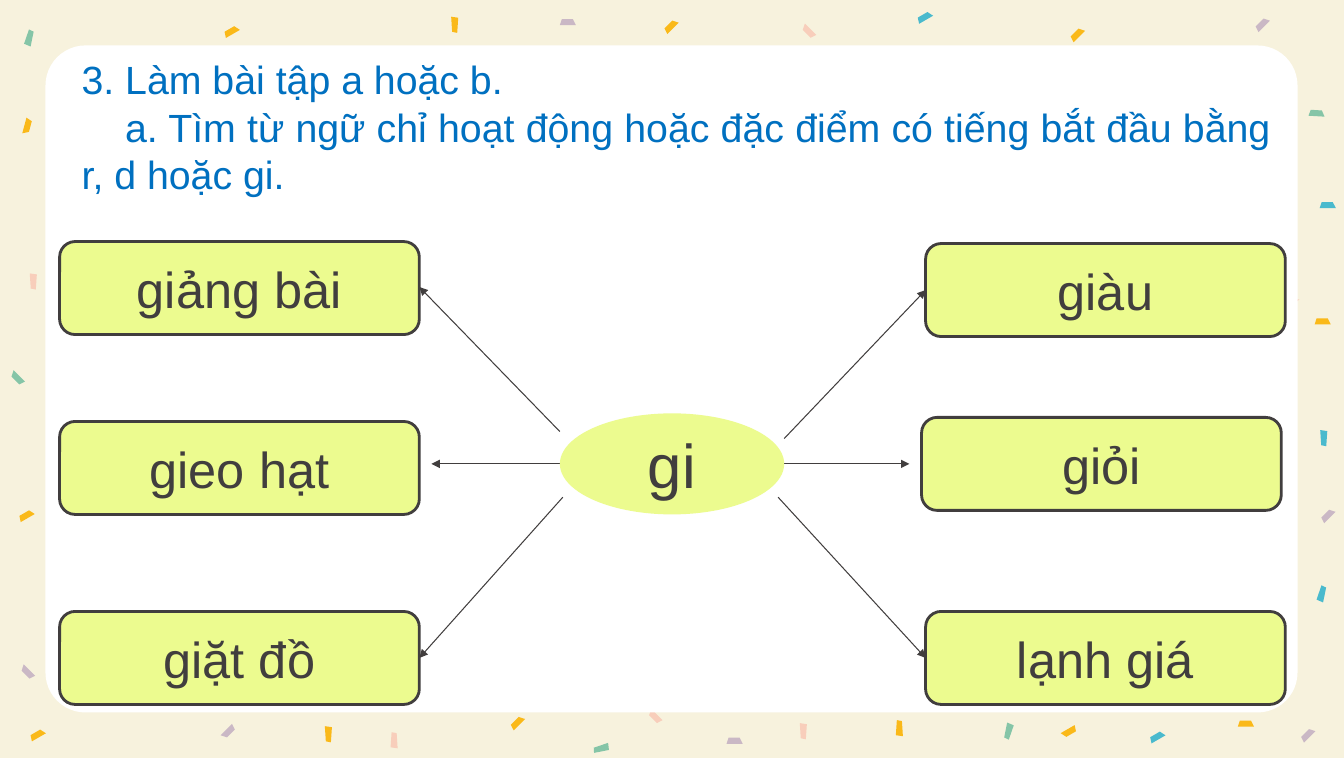
from dataclasses import dataclass

from pptx import Presentation, util as u
from pptx.dml.color import RGBColor
from pptx.enum import shapes, text
from pptx.oxml import parse_xml
from pptx.oxml.ns import nsdecls

CREAM = RGBColor(0xF7, 0xF2, 0xDD)
WHITE = RGBColor(0xFF, 0xFF, 0xFF)
LIME = RGBColor(0xEC, 0xFB, 0x8F)
INK = RGBColor(0x41, 0x3E, 0x3E)
BLUE = RGBColor(0x00, 0x70, 0xC0)
YELLOW = RGBColor(0xFA, 0xB9, 0x19)
PINK = RGBColor(0xF8, 0xCE, 0xBB)
GREEN = RGBColor(0x85, 0xC5, 0xA7)
MAUVE = RGBColor(0xCA, 0xB8, 0xC5)
TEAL = RGBColor(0x4A, 0xBA, 0xCD)
FONT = "Arial"

# Confetti outlines before rotation, relative to the top left corner
SLAB = ((0.02, 0), (0.13, 0), (0.16, 0.06), (0, 0.06))
SLIVER = ((0.15, 0.07), (0, 0.06), (0.01, 0.01), (0.16, 0))


@dataclass
class Confetti:
    left: float
    top: float
    angle: float
    color: RGBColor
    outline: tuple = SLAB


@dataclass
class Word:
    label: str
    left: float
    top: float
    arrow_start: tuple[float, float]
    arrow_end: tuple[float, float]


CONFETTI = [
    # Top edge
    Confetti(2.21, 0.28, 330, YELLOW),
    Confetti(4.42, 0.21, 270, YELLOW, SLIVER),
    Confetti(5.54, 0.19, 0, MAUVE),
    Confetti(6.56, 0.23, 315, YELLOW),
    Confetti(7.92, 0.28, 225, PINK),
    Confetti(9.07, 0.14, 330, TEAL),
    Confetti(10.58, 0.31, 315, YELLOW),
    Confetti(12.41, 0.21, 315, MAUVE),
    # Left edge
    Confetti(0.21, 0.34, 105, GREEN, SLIVER),
    Confetti(0.19, 1.22, 105, YELLOW),
    Confetti(0.25, 2.75, 270, PINK, SLIVER),
    Confetti(0.09, 3.71, 225, GREEN),
    Confetti(0.18, 5.07, 330, YELLOW),
    Confetti(0.19, 6.62, 225, MAUVE),
    # Right edge
    Confetti(12.95, 1.09, 3.4, GREEN),
    Confetti(13.06, 2, 0, TEAL),
    Confetti(13.01, 3.15, 0, YELLOW),
    Confetti(13.02, 4.3, 270, TEAL, SLIVER),
    Confetti(13.06, 5.07, 315, MAUVE),
    Confetti(13, 5.84, 105, TEAL, SLIVER),
    # Bottom edge
    Confetti(0.29, 7.24, 330, YELLOW),
    Confetti(2.18, 7.21, 135, MAUVE),
    Confetti(3.17, 7.23, 270, YELLOW, SLIVER),
    Confetti(3.82, 7.29, 90, PINK, SLIVER),
    Confetti(5.04, 7.12, 315, YELLOW),
    Confetti(5.87, 7.37, 345, GREEN, SLIVER),
    Confetti(6.4, 7.06, 225, PINK),
    Confetti(7.19, 7.3, 0, MAUVE),
    Confetti(7.87, 7.2, 270, PINK, SLIVER),
    Confetti(8.82, 7.17, 90, YELLOW, SLIVER),
    Confetti(9.9, 7.2, 285, GREEN, SLIVER),
    Confetti(10.5, 7.21, 150, YELLOW),
    Confetti(11.37, 7.26, 330, TEAL),
    Confetti(12.25, 7.13, 0, YELLOW),
    Confetti(12.86, 7.24, 315, MAUVE),
]

WORDS = [
    Word("giảng bài", 0.59, 2.39, (5.54, 4.27), (4.15, 2.84)),
    Word("gieo hạt", 0.59, 4.17, (5.54, 4.59), (4.27, 4.59)),
    Word("giặt đồ", 0.59, 6.05, (5.57, 4.92), (4.15, 6.51)),
    Word("giàu", 9.16, 2.41, (7.76, 4.34), (9.16, 2.87)),
    Word("giỏi", 9.12, 4.13, (7.76, 4.59), (9, 4.59)),
    Word("lạnh giá", 9.16, 6.05, (7.7, 4.92), (9.16, 6.51)),
]


def paint(shape, color: RGBColor) -> None:
    shape.shadow.inherit = False
    shape.fill.solid()
    shape.fill.fore_color.rgb = color
    shape.line.fill.background()


def add_confetti(slide, piece: Confetti) -> None:
    points = [(u.Inches(piece.left + x), u.Inches(piece.top + y)) for x, y in piece.outline]
    builder = slide.shapes.build_freeform(*points[0])
    builder.add_line_segments(points[1:])
    shape = builder.convert_to_shape()
    shape.rotation = piece.angle
    paint(shape, piece.color)


def add_block(slide, kind, box: tuple[float, ...], color: RGBColor):
    shape = slide.shapes.add_shape(kind, *map(u.Inches, box))
    paint(shape, color)
    return shape


def style(paragraph, size: int, color: RGBColor, alignment) -> None:
    paragraph.alignment = alignment
    paragraph.font.name = FONT
    paragraph.font.size = u.Pt(size)
    paragraph.font.color.rgb = color


def add_label(shape, label: str, size: int) -> None:
    frame = shape.text_frame
    frame.vertical_anchor = text.MSO_ANCHOR.MIDDLE
    frame.text = label
    style(frame.paragraphs[0], size, INK, text.PP_ALIGN.CENTER)


def add_arrow(slide, start: tuple[float, float], end: tuple[float, float]) -> None:
    arrow = slide.shapes.add_connector(
        shapes.MSO_CONNECTOR.STRAIGHT, *map(u.Inches, start + end))
    arrow.line.color.rgb = INK
    arrow.line.width = u.Pt(0.75)
    arrow.line._get_or_add_ln().append(
        parse_xml(f'<a:tailEnd {nsdecls("a")} type="triangle"/>'))
    arrow._element.spPr.append(parse_xml(f'<a:effectLst {nsdecls("a")}/>'))


def add_task(slide) -> None:
    box = slide.shapes.add_textbox(*map(u.Inches, (0.71, 0.5, 11.96, 1.51)))
    frame = box.text_frame
    frame.word_wrap = True
    frame.auto_size = text.MSO_AUTO_SIZE.SHAPE_TO_FIT_TEXT
    frame.text = ("3. Làm bài tập a hoặc b.\n"
                  "a. Tìm từ ngữ chỉ hoạt động hoặc đặc điểm có tiếng bắt đầu bằng r, d hoặc gi.")
    for paragraph in frame.paragraphs:
        style(paragraph, 28, BLUE, text.PP_ALIGN.JUSTIFY)
    # First-line indent of the second paragraph
    properties = frame.paragraphs[1]._p.get_or_add_pPr()
    properties.set("marL", "0")
    properties.set("indent", str(u.Inches(0.43)))


def main() -> None:
    presentation = Presentation()
    presentation.slide_width = u.Inches(13.3)
    presentation.slide_height = u.Inches(7.5)
    slide = presentation.slides.add_slide(presentation.slide_layouts[6])
    kinds = shapes.MSO_SHAPE

    # Background, confetti and white panel
    slide.background.fill.solid()
    slide.background.fill.fore_color.rgb = CREAM
    for piece in CONFETTI:
        add_confetti(slide, piece)
    star = add_block(slide, kinds.STAR_5_POINT, (12.58, 2.86, 0.28, 0.27), PINK)
    star.adjustments[0] = 0.19
    panel = add_block(slide, kinds.ROUNDED_RECTANGLE, (0.45, 0.45, 12.39, 6.6), WHITE)
    panel.adjustments[0] = 0.06

    add_task(slide)

    # Word boxes with their arrows
    for word in WORDS:
        card = add_block(slide, kinds.ROUNDED_RECTANGLE, (word.left, word.top, 3.56, 0.92), LIME)
        card.line.color.rgb = INK
        card.line.width = u.Pt(2)
        add_label(card, word.label, 36)
        add_arrow(slide, word.arrow_start, word.arrow_end)

    # Centre of the diagram
    hub = add_block(slide, kinds.OVAL, (5.54, 4.09, 2.22, 1), LIME)
    add_label(hub, "gi", 44)

    presentation.save("out.pptx")


if __name__ == "__main__":
    main()
